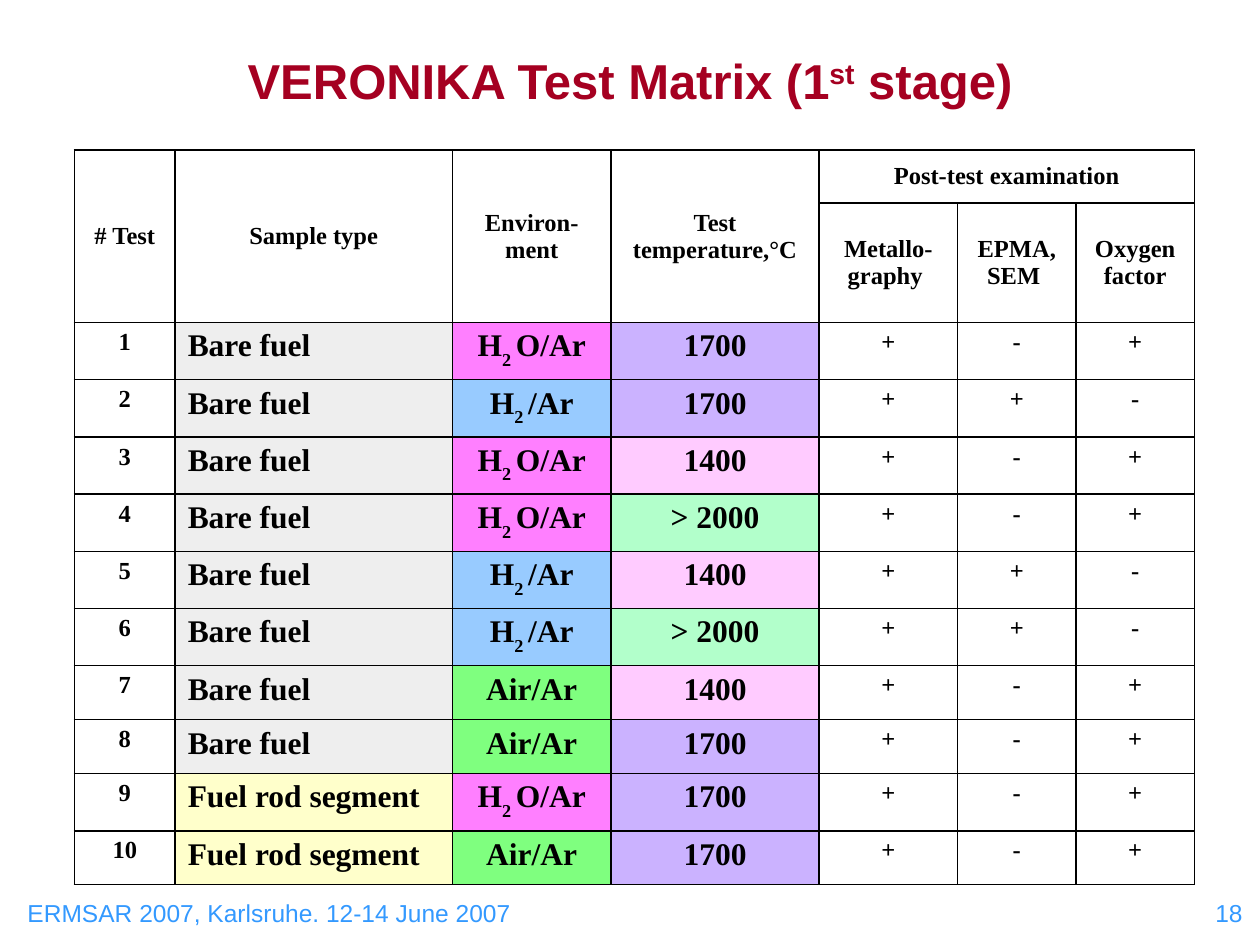
"""Build the test matrix slide."""
from lxml import etree
from pptx import Presentation
from pptx.dml.color import RGBColor
from pptx.enum.text import MSO_ANCHOR, MSO_AUTO_SIZE, PP_ALIGN
from pptx.oxml.ns import qn
from pptx.util import Inches, Pt

LEFT, MID, RIGHT = PP_ALIGN.LEFT, PP_ALIGN.CENTER, PP_ALIGN.RIGHT
TOP, CENTER = MSO_ANCHOR.TOP, MSO_ANCHOR.MIDDLE
NO_FIT = MSO_AUTO_SIZE.NONE

BLACK = RGBColor(0x00, 0x00, 0x00)
RED = RGBColor(0xA5, 0x00, 0x21)
BLUE = RGBColor(0x33, 0x99, 0xFF)
GRAY = RGBColor(0xDE, 0xDE, 0xDE)
YELLOW = RGBColor(0xFF, 0xFF, 0x99)
PINK = RGBColor(0xFF, 0x00, 0xFF)
GREEN = RGBColor(0x00, 0xFF, 0x00)
VIOLET = RGBColor(0x99, 0x66, 0xFF)
ROSE = RGBColor(0xFF, 0x99, 0xFF)
MINT = RGBColor(0x66, 0xFF, 0x99)

SANS, SERIF = "Arial", "Times New Roman"
COLS = [0.8, 2.2, 1.26, 1.65, 1.1, 0.94, 0.94]
HEADS = [0.42, 0.95]
HIGH = 5.65

BARE, ROD = "Bare fuel", "Fuel rod segment"
STEAM, HYDRO, AIR = "Н|2 |О/Ar", "Н|2 |/Ar", "Air/Ar"
FILLS = {
    BARE: GRAY, ROD: YELLOW,
    STEAM: PINK, "Н|2 |O/Ar": PINK, HYDRO: BLUE, AIR: GREEN,
    "1700": VIOLET, "1400": ROSE, "> 2000": MINT,
}
TESTS = [
    (BARE, STEAM, "1700", "+-+"),
    (BARE, HYDRO, "1700", "++-"),
    (BARE, STEAM, "1400", "+-+"),
    (BARE, STEAM, "> 2000", "+-+"),
    (BARE, HYDRO, "1400", "++-"),
    (BARE, HYDRO, "> 2000", "++-"),
    (BARE, AIR, "1400", "+-+"),
    (BARE, AIR, "1700", "+-+"),
    (ROD, "Н|2 |O/Ar", "1700", "+-+"),
    (ROD, AIR, "1700", "+-+"),
]
TALL = ["# Test", "Sample type", "Environ-ment", "Test temperature,°С"]
EXAMS = ["Metallo-graphy ", "EPMA,\vSEM ", "Oxygen factor"]


def write(frame, text, size, face, color, bold=False, align=LEFT, shift=-30):
    """Fill a frame, raising or lowering every second part between bars."""
    para = frame.paragraphs[0]
    para.alignment = align
    first, *rest = text.split("|")
    para.text = first
    for i, part in enumerate(rest):
        run = para.add_run()
        run.text = part
        if i % 2 == 0:
            run.font._element.set("baseline", str(shift * 1000))
    for run in para.runs:
        font = run.font
        font.size, font.name, font.bold = Pt(size), face, bold
        font.color.rgb = color


def add_title(slide):
    """Place and fill the title."""
    title = slide.shapes.title
    title.left, title.top = Inches(0.5), Inches(0.3)
    title.width, title.height = Inches(9), Inches(0.46)
    frame = title.text_frame
    frame.auto_size, frame.vertical_anchor = NO_FIT, TOP
    frame.margin_top, frame.margin_bottom = Inches(0.1), 0
    write(frame, "VERONIKA Test Matrix (1|st| stage)", 28, SANS, RED, True, MID, 30)


def add_note(slide, text, left, width, align):
    """Add one text of the bottom line."""
    box = slide.shapes.add_textbox(
        Inches(left), Inches(7.08), Inches(width), Inches(0.37))
    box.text_frame.word_wrap = True
    write(box.text_frame, text, 14, SANS, BLUE, align=align)


def paint(cell, color=None):
    """Give a cell black borders and a half-clear fill or none."""
    props = cell._tc.get_or_add_tcPr()
    for side in ("a:lnL", "a:lnR", "a:lnT", "a:lnB"):
        line = etree.SubElement(props, qn(side), w=str(Pt(1)))
        solid = etree.SubElement(line, qn("a:solidFill"))
        etree.SubElement(solid, qn("a:srgbClr"), val=str(BLACK))
    if color is None:
        cell.fill.background()
        return
    cell.fill.solid()
    cell.fill.fore_color.rgb = color
    tint = props.find(qn("a:solidFill")).find(qn("a:srgbClr"))
    etree.SubElement(tint, qn("a:alpha"), val="50000")


def fill_head(table):
    """Merge and label the two head rows."""
    for col, text in enumerate(TALL):
        table.cell(0, col).merge(table.cell(1, col))
    table.cell(0, 4).merge(table.cell(0, 6))
    labels = [(0, i, text) for i, text in enumerate(TALL)]
    labels += [(1, i, text) for i, text in enumerate(EXAMS, 4)]
    for row, col, text in labels + [(0, 4, "Post-test examination")]:
        cell = table.cell(row, col)
        cell.vertical_anchor = CENTER
        write(cell.text_frame, text, 14, SERIF, BLACK, True, MID)


def add_matrix(slide):
    """Add the table of tests."""
    count = len(HEADS) + len(TESTS)
    table = slide.shapes.add_table(
        count, len(COLS), Inches(0.59), Inches(1.19),
        Inches(sum(COLS)), Inches(HIGH)).table
    table.first_row = table.horz_banding = False
    for col, width in zip(table.columns, COLS):
        col.width = Inches(width)
    step = (HIGH - sum(HEADS)) / len(TESTS)
    for row, height in zip(table.rows, HEADS + [step] * len(TESTS)):
        row.height = Inches(height)
    fill_head(table)
    for row, (kind, gas, heat, marks) in enumerate(TESTS, 1):
        for col, text in enumerate([str(row), kind, gas, heat, *marks]):
            size = 18 if 1 <= col <= 3 else 14
            align = LEFT if col == 1 else MID
            cell = table.cell(row + 1, col)
            write(cell.text_frame, text, size, SERIF, BLACK, True, align)
            paint(cell, FILLS.get(text))
    for row in range(len(HEADS)):
        for col in range(len(COLS)):
            paint(table.cell(row, col))


def main():
    """Build and save the slide."""
    deck = Presentation()
    deck.slide_width, deck.slide_height = Inches(10), Inches(7.5)
    slide = deck.slides.add_slide(deck.slide_layouts[5])
    add_note(slide, "ERMSAR 2007, Karlsruhe. 12-14 June 2007", 0.12, 6.07, LEFT)
    add_note(slide, "18", 8.61, 1.35, RIGHT)
    add_title(slide)
    add_matrix(slide)
    deck.save("out.pptx")


if __name__ == "__main__":
    main()
